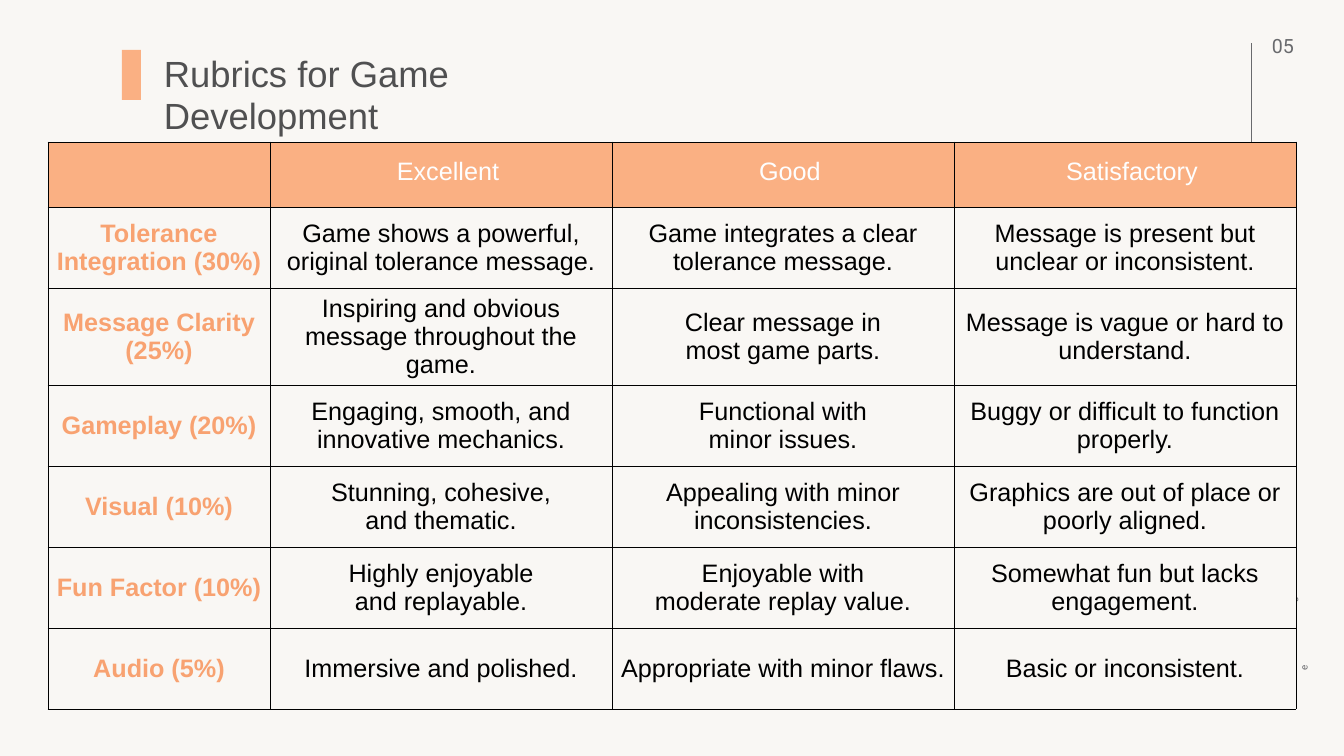
from lxml import etree
from pptx import Presentation
from pptx.dml.color import RGBColor
from pptx.enum.shapes import MSO_CONNECTOR, MSO_SHAPE
from pptx.enum.text import MSO_ANCHOR, PP_ALIGN
from pptx.oxml.ns import qn
from pptx.util import Pt

PX = 18143  # EMU in one px
RECTANGLE = MSO_SHAPE.RECTANGLE
STRAIGHT = MSO_CONNECTOR.STRAIGHT
MIDDLE = MSO_ANCHOR.MIDDLE
CENTER = PP_ALIGN.CENTER

CREAM = RGBColor(0xF9, 0xF7, 0xF4)
PEACH = RGBColor(0xFA, 0xB0, 0x83)
ORANGE = RGBColor(0xF8, 0xA2, 0x71)
WHITE = RGBColor(0xFE, 0xFE, 0xFE)
BLACK = RGBColor(0, 0, 0)
GREY = RGBColor(0x69, 0x6A, 0x6D)
DARK_GREY = RGBColor(0x50, 0x50, 0x51)

SLIDE_BOX = (0, 0, 1344, 756)
HEADING_BOX = (122, 50, 550, 50)
TABLE_BOX = (48, 142, 1248, 567)
SIDE_BOX = (1251, 43, 56, 666)

LEVELS = ["", "Excellent", "Good", "Satisfactory"]
CRITERIA = [
    ["Tolerance Integration (30%)",
     "Game shows a powerful,\noriginal tolerance message.",
     "Game integrates a clear tolerance message.",
     "Message is present but unclear or inconsistent."],
    ["Message Clarity (25%)",
     "Inspiring and obvious message throughout the game.",
     "Clear message in\nmost game parts.",
     "Message is vague or hard to understand."],
    ["Gameplay (20%)",
     "Engaging, smooth, and innovative mechanics.",
     "Functional with\nminor issues.",
     "Buggy or difficult to function properly."],
    ["Visual (10%)",
     "Stunning, cohesive,\nand thematic.",
     "Appealing with minor inconsistencies.",
     "Graphics are out of place or poorly aligned."],
    ["Fun Factor (10%)",
     "Highly enjoyable\nand replayable.",
     "Enjoyable with\nmoderate replay value.",
     "Somewhat fun but lacks engagement."],
    ["Audio (5%)",
     "Immersive and polished.",
     "Appropriate with minor flaws.",
     "Basic or inconsistent."],
]
LABEL_WIDTH = 222
HEADER_HEIGHT, ROW_HEIGHT, TALL_ROW_HEIGHT = 65, 81, 97
TALL_ROW = 2


def emu(*lengths):
    return [length * PX for length in lengths]


def style_text(frame, size, font_name, color, spacing, bold=False):
    for paragraph in frame.paragraphs:
        paragraph.line_spacing = Pt(spacing)
        for run in paragraph.runs:
            run.font.size = Pt(size)
            run.font.name = font_name
            run.font.bold = bold
            run.font.color.rgb = color


def add_block(slide, box, color):
    block = slide.shapes.add_shape(RECTANGLE, *emu(*box))
    block.shadow.inherit = False
    block.fill.solid()
    block.fill.fore_color.rgb = color
    block.line.fill.background()


def add_text(slide, box, text, size, font_name, color, spacing):
    label = slide.shapes.add_textbox(*emu(*box))
    frame = label.text_frame
    frame.margin_left = frame.margin_right = 0
    frame.margin_top = frame.margin_bottom = 0
    frame.word_wrap = True
    frame.text = text
    style_text(frame, size, font_name, color, spacing)
    return label


def add_heading(slide, box):
    left, top, width, height = box
    add_block(slide, (left, top, 19, height), PEACH)
    add_text(slide, (left + 42, top + 3, width - 42, 42),
             "Rubrics for Game Development", 52, "Arial", DARK_GREY, 60)


def add_side_strip(slide, box):
    """Place the vertical rule, the page number and the turned web address."""
    left, top, width, height = box
    rule = slide.shapes.add_connector(
        STRAIGHT, *emu(left, top + height, left, top))
    rule.line.color.rgb = GREY
    rule.line.width = Pt(0.5)
    etree.SubElement(rule._element.spPr, qn("a:effectLst"))
    add_text(slide, (left + 21, top + 3, width - 21, 38),
             "05", 28, "Roboto", GREY, 17)
    address = add_text(slide, (left - 16, top + 574, 94, 12),
                       " www.tolerance.gov.ae", 14, "Roboto", GREY, 16)
    address.rotation = 270


def draw_borders(cell):
    properties = cell._tc.get_or_add_tcPr()
    for index, side in enumerate(("lnL", "lnR", "lnT", "lnB")):
        border = etree.Element(qn(f"a:{side}"), w=str(Pt(1)))
        fill = etree.SubElement(border, qn("a:solidFill"))
        etree.SubElement(fill, qn("a:srgbClr"), val=str(BLACK))
        properties.insert(index, border)


def fill_cell(cell, text, fill, color, spacing, margins, bold=False):
    cell.fill.solid()
    cell.fill.fore_color.rgb = fill
    draw_borders(cell)
    cell.vertical_anchor = MIDDLE
    (cell.margin_left, cell.margin_top,
     cell.margin_right, cell.margin_bottom) = emu(*margins)
    cell.text_frame.text = text
    style_text(cell.text_frame, 36, "Arial", color, spacing, bold)
    for paragraph in cell.text_frame.paragraphs:
        paragraph.alignment = CENTER


def add_rubric(slide, box):
    table = slide.shapes.add_table(
        len(CRITERIA) + 1, len(LEVELS), *emu(*box)).table
    level_width = (box[2] - LABEL_WIDTH) // (len(LEVELS) - 1)
    for index, column in enumerate(table.columns):
        column.width = PX * (level_width if index else LABEL_WIDTH)
    for row in table.rows:
        row.height = PX * ROW_HEIGHT
    table.rows[0].height = PX * HEADER_HEIGHT
    table.rows[TALL_ROW].height = PX * TALL_ROW_HEIGHT

    for index, level in enumerate(LEVELS):
        fill_cell(table.cell(0, index), level, PEACH, WHITE, 33,
                  (14, 0, 0, 0))
    for row, texts in enumerate(CRITERIA, start=1):
        for index, text in enumerate(texts):
            is_label = index == 0
            fill_cell(table.cell(row, index), text, CREAM,
                      ORANGE if is_label else BLACK, 40,
                      (4, 4, 4, 4), is_label)


def main():
    deck = Presentation()
    deck.slide_width, deck.slide_height = emu(*SLIDE_BOX[2:])
    slide = deck.slides.add_slide(deck.slide_layouts[6])
    add_block(slide, SLIDE_BOX, CREAM)
    add_side_strip(slide, SIDE_BOX)
    add_rubric(slide, TABLE_BOX)
    add_heading(slide, HEADING_BOX)
    deck.save("out.pptx")


if __name__ == "__main__":
    main()
